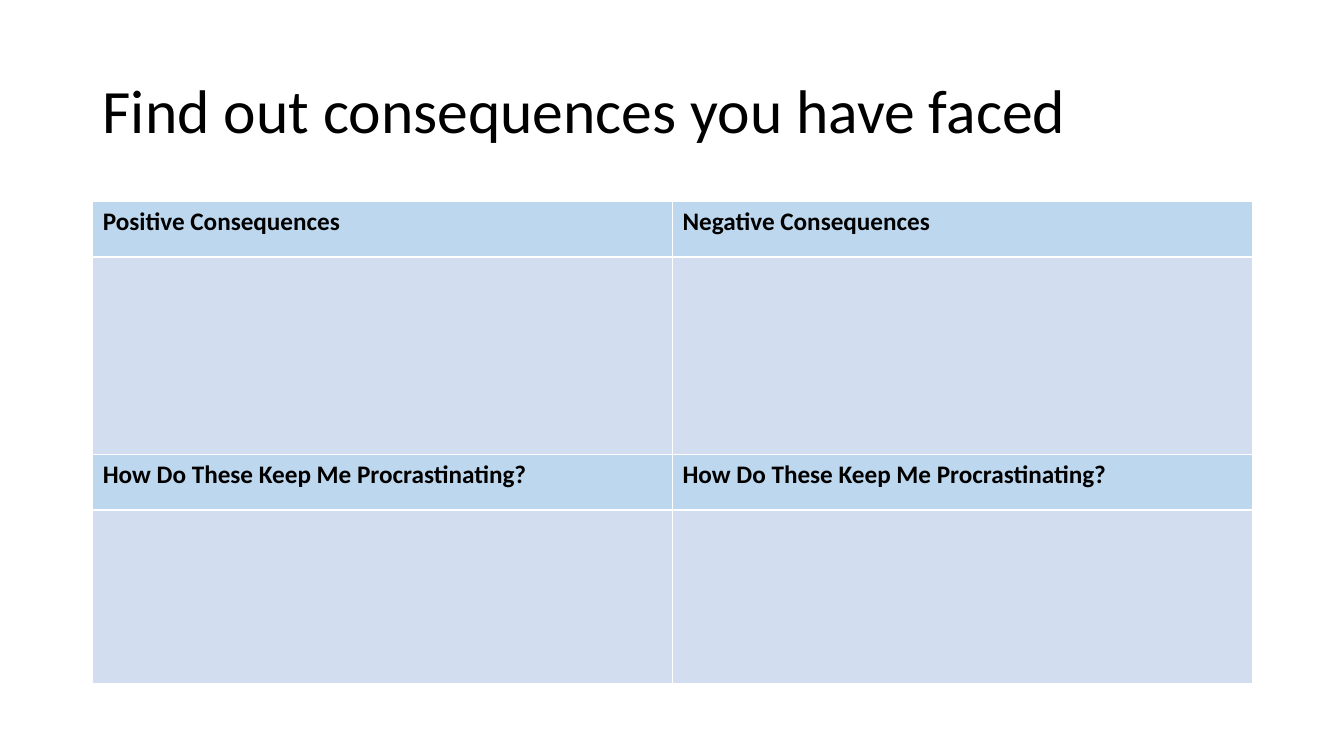
from pptx import Presentation
from pptx.dml.color import RGBColor
from pptx.enum.text import MSO_ANCHOR
from pptx.util import Inches, Pt

# Content
TITLE = "Find out consequences you have faced"
PROMPT = "How Do These Keep Me Procrastinating?"
ROWS = [
    # height, fill, texts
    (0.55, "heading", ("Positive Consequences", "Negative Consequences")),
    (1.96, "answer", ("", "")),
    (0.55, "heading", (PROMPT, PROMPT)),
    (1.72, "answer", ("", "")),
]
COLORS = {"text": "000000", "heading": "BDD7EE", "answer": "D2DEEF"}
FONT = "Calibri"
LEFT, WIDTH = 0.92, 11.5
COLUMN_COUNT = 2


def style_font(paragraph, size, bold=False):
    font = paragraph.font
    font.name = FONT
    font.size = Pt(size)
    font.bold = bold
    font.color.rgb = RGBColor.from_string(COLORS["text"])


presentation = Presentation()
presentation.slide_width = Inches(13.33)
presentation.slide_height = Inches(7.5)
slide = presentation.slides.add_slide(presentation.slide_layouts[6])

# Title
title_box = slide.shapes.add_textbox(
    Inches(LEFT), Inches(0.4), Inches(WIDTH), Inches(1.45))
title_frame = title_box.text_frame
title_frame.word_wrap = True
title_frame.vertical_anchor = MSO_ANCHOR.MIDDLE
title_paragraph = title_frame.paragraphs[0]
title_paragraph.text = TITLE
title_paragraph.line_spacing = 0.9
style_font(title_paragraph, 44)

# Worksheet table: the default table style supplies the white borders
table_height = sum(height for height, _, _ in ROWS)
table = slide.shapes.add_table(
    len(ROWS), COLUMN_COUNT, Inches(LEFT), Inches(2),
    Inches(WIDTH), Inches(table_height)).table
for column in table.columns:
    column.width = Inches(WIDTH / COLUMN_COUNT)

for row, (height, fill, texts) in zip(table.rows, ROWS):
    row.height = Inches(height)
    for cell, text in zip(row.cells, texts):
        cell.fill.solid()
        cell.fill.fore_color.rgb = RGBColor.from_string(COLORS[fill])
        if text:
            cell.text = text
            style_font(cell.text_frame.paragraphs[0], 18, bold=True)

presentation.save("out.pptx")
